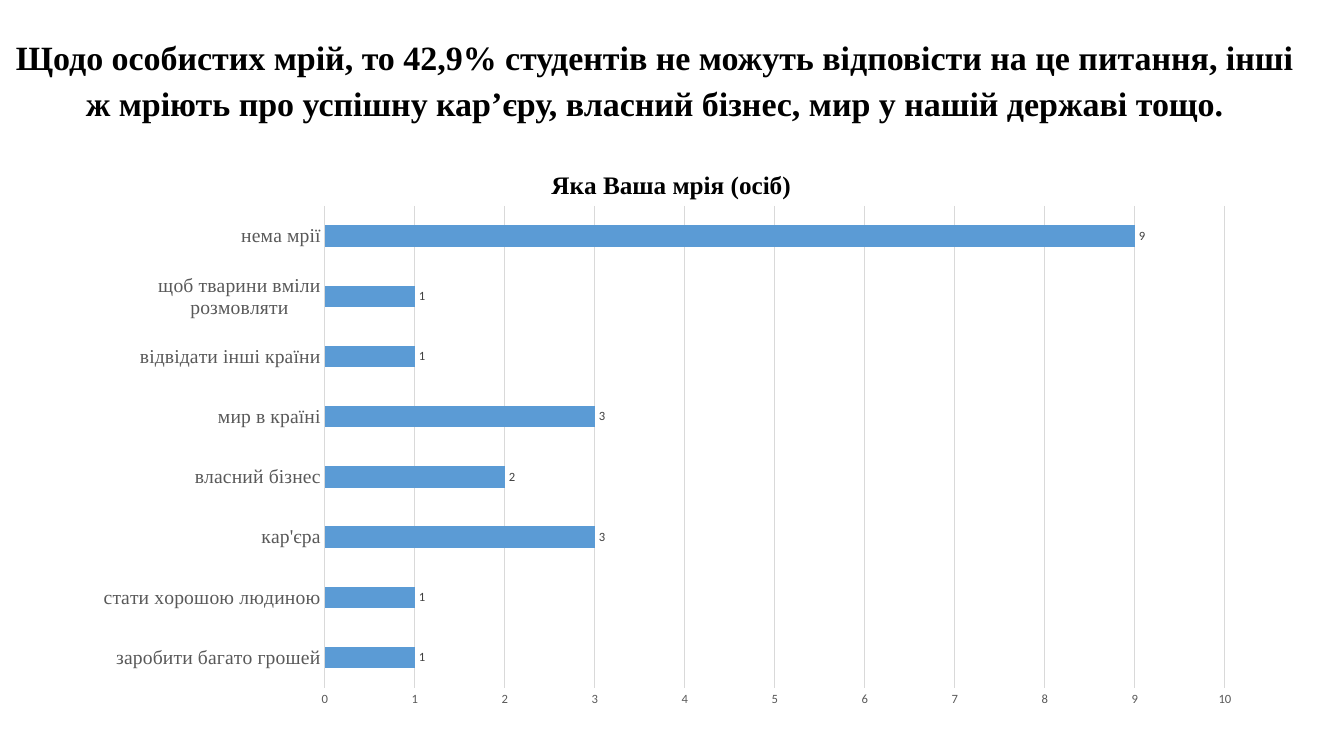
from lxml import etree
from pptx import Presentation
from pptx.chart.data import CategoryChartData
from pptx.dml.color import RGBColor
from pptx.enum.chart import XL_CHART_TYPE, XL_LABEL_POSITION, XL_TICK_MARK
from pptx.enum.text import MSO_ANCHOR, MSO_AUTO_SIZE, PP_ALIGN
from pptx.oxml.ns import qn
from pptx.util import Cm, Pt

BAR = XL_CHART_TYPE.BAR_CLUSTERED
OUTSIDE = XL_LABEL_POSITION.OUTSIDE_END
NO_TICK = XL_TICK_MARK.NONE
MIDDLE = MSO_ANCHOR.MIDDLE
NO_FIT = MSO_AUTO_SIZE.NONE
CENTER = PP_ALIGN.CENTER

SERIF = "Times New Roman"
SANS = "Calibri"
BLACK = "000000"
GRAY = "595959"
PALE = "D9D9D9"

TITLE = (
    "Щодо особистих мрій, то 42,9% студентів не можуть відповісти на це питання, "
    "інші ж мріють про успішну кар’єру, власний бізнес, мир у нашій державі тощо."
)
DREAMS = {
    "заробити багато грошей": 1,
    "стати хорошою людиною": 1,
    "кар'єра": 3,
    "власний бізнес": 2,
    "мир в країні": 3,
    "відвідати інші країни": 1,
    "щоб тварини вміли розмовляти": 1,
    "нема мрії": 9,
}


def color(text):
    return RGBColor.from_string(text)


def style(font, name, size, tint, bold=False):
    font.name = name
    font.size = Pt(size)
    font.bold = bold
    font.color.rgb = color(tint)


def stroke(line, tint):
    line.color.rgb = color(tint)
    line.width = Pt(0.75)


def arrange(part, index, **spots):
    for old in part.findall(qn("c:layout")):
        part.remove(old)
    layout = etree.Element(qn("c:layout"))
    manual = etree.SubElement(layout, qn("c:manualLayout"))
    if "w" in spots:
        etree.SubElement(manual, qn("c:layoutTarget")).set("val", "inner")
    for side in "xy":
        etree.SubElement(manual, qn(f"c:{side}Mode")).set("val", "edge")
    for key, value in spots.items():
        etree.SubElement(manual, qn(f"c:{key}")).set("val", str(value))
    part.insert(index, layout)


def add_title(slide, left, top, width, height):
    title = slide.shapes.title
    title.left, title.top, title.width, title.height = left, top, width, height
    frame = title.text_frame
    frame.text = TITLE
    frame.word_wrap = True
    frame.auto_size = NO_FIT
    frame.vertical_anchor = MIDDLE
    para = frame.paragraphs[0]
    para.alignment = CENTER
    para.line_spacing = 1.12
    style(para.runs[0].font, SERIF, 24.3, BLACK, True)


def add_bars(slide, left, top, width, height):
    data = CategoryChartData()
    data.categories = DREAMS.keys()
    data.add_series("Series 1", DREAMS.values())
    chart = slide.shapes.add_chart(BAR, left, top, width, height, data).chart
    style(chart.font, SANS, 10, BLACK)
    chart.has_legend = False

    frame = chart.chart_title.text_frame
    frame.text = "Яка Ваша мрія (осіб)"
    style(frame.paragraphs[0].runs[0].font, SERIF, 18, BLACK, True)
    root = chart.element.find(qn("c:chart"))
    arrange(root.find(qn("c:title")), 1, x=0.4, y=0.04)
    arrange(root.find(qn("c:plotArea")), 0, x=0.21, y=0.11, w=0.77, h=0.83)

    names, scale = chart.category_axis, chart.value_axis
    for axis, face, size in ((names, SERIF, 14), (scale, SANS, 9)):
        axis.major_tick_mark = axis.minor_tick_mark = NO_TICK
        style(axis.tick_labels.font, face, size, GRAY)
    stroke(names.format.line, PALE)
    scale.format.line.fill.background()
    scale.has_major_gridlines = True
    stroke(scale.major_gridlines.format.line, PALE)
    scale.minimum_scale, scale.maximum_scale, scale.major_unit = 0, 10, 1

    plot = chart.plots[0]
    plot.gap_width = 182
    plot.vary_by_categories = False
    fill = plot.series[0].format.fill
    fill.solid()
    fill.fore_color.rgb = color("5B9BD5")
    plot.has_data_labels = True
    labels = plot.data_labels
    labels.show_value = True
    labels.position = OUTSIDE
    style(labels.font, SANS, 9, "404040")


def main():
    deck = Presentation()
    deck.slide_width, deck.slide_height = Cm(33.87), Cm(19.05)
    slide = deck.slides.add_slide(deck.slide_layouts[5])
    add_title(slide, Cm(0), Cm(1.02), Cm(33), Cm(1.88))
    add_bars(slide, Cm(2), Cm(3.58), Cm(29.46), Cm(14.63))
    deck.save("out.pptx")


if __name__ == "__main__":
    main()
